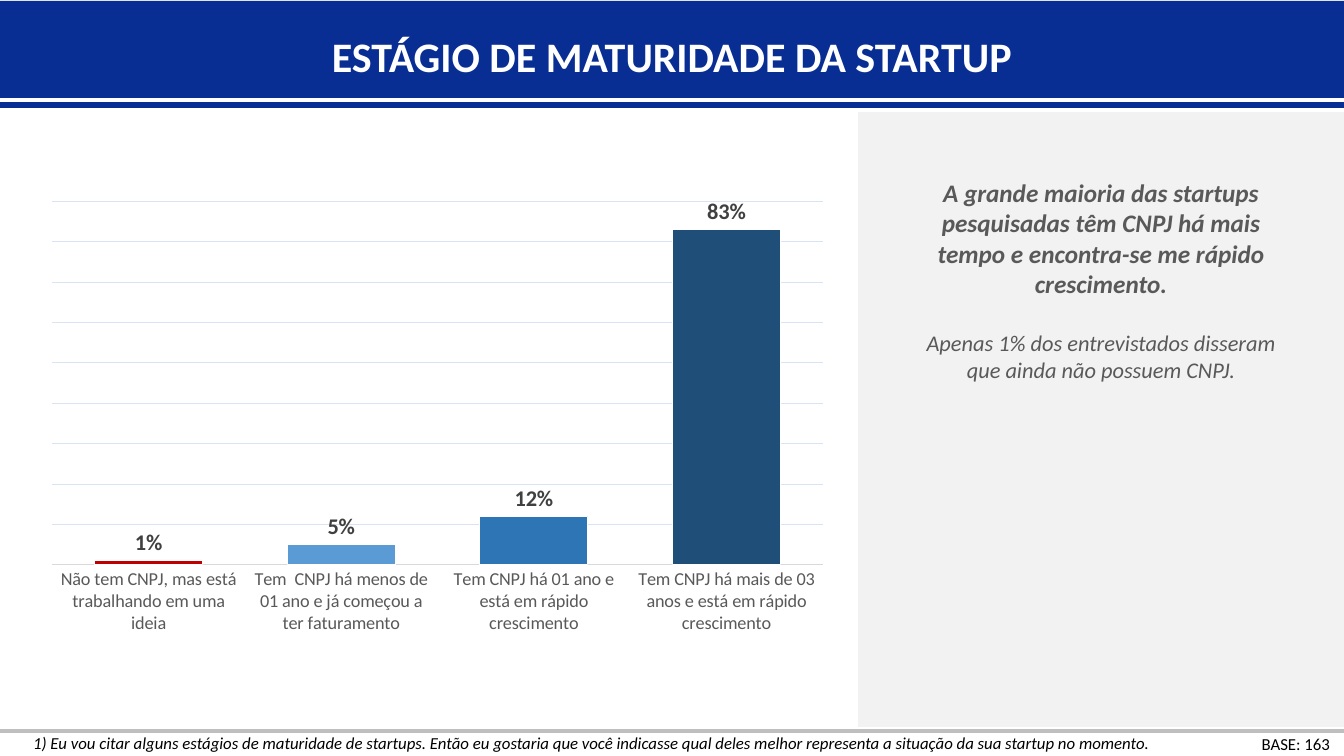
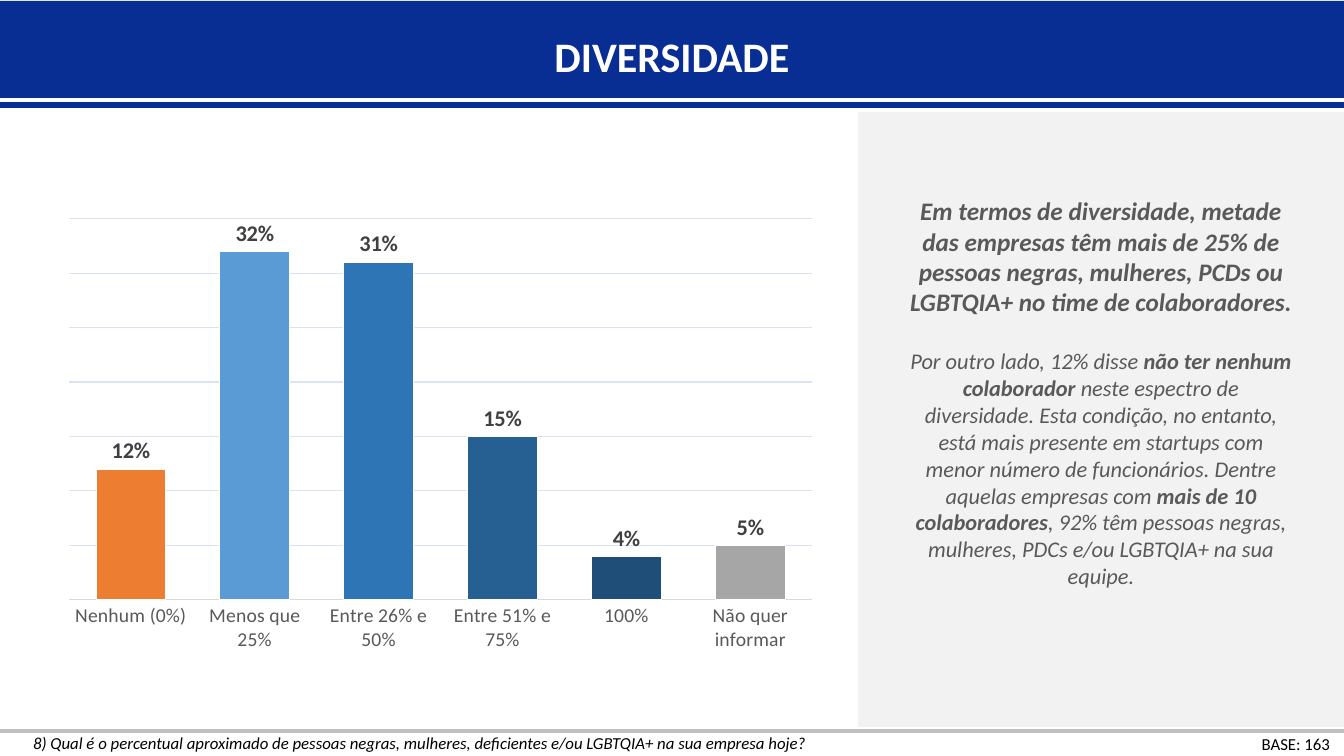
from dataclasses import dataclass

from lxml import etree
from pptx import Presentation
from pptx import util as u
from pptx.chart import data as chart_data
from pptx.dml.color import RGBColor
from pptx.enum import chart as chart_enum
from pptx.enum import shapes, text
from pptx.oxml import ns

# Shared style
FONT = "Calibri"
NAVY, WHITE, PANEL, RULE = "082D93", "FFFFFF", "F2F2F2", "BFBFBF"
BLACK, BODY, LABEL = "000000", "595959", "404040"
AXIS, GRID, SERIES = "D9D9D9", "DAE3F3", "A9D18E"
SKY, BLUE, STEEL, DEEP = "5B9BD5", "2E75B6", "265F92", "1F4E79"
RED, ORANGE, GREY = "C00000", "ED7D31", "A6A6A6"

SLIDE_WIDTH, SLIDE_HEIGHT = 13.33, 7.5
BAND_TOP, BAND_BOTTOM = 0.01, 1.09
PANEL_LEFT, PANEL_BOTTOM = 8.51, 7.21
BASE_TEXT = "BASE: 163"


@dataclass(frozen=True)
class Box:
    left: float
    top: float
    width: float
    height: float

    def lengths(self) -> tuple[u.Length, ...]:
        return tuple(u.Inches(value) for value in
                     (self.left, self.top, self.width, self.height))


@dataclass(frozen=True)
class Rule:
    y: float
    color: str


@dataclass(frozen=True)
class Run:
    text: str
    bold: bool = False


@dataclass(frozen=True)
class Bar:
    category: str
    value: float
    color: str


@dataclass(frozen=True)
class ColumnChart:
    box: Box
    bars: tuple[Bar, ...]
    category_size: int
    maximum: float
    step: float


@dataclass(frozen=True)
class SurveySlide:
    title: str
    question: str
    headline: str
    details: tuple[Run, ...]
    panel_side_inset: float
    panel_top_inset: float
    chart: ColumnChart


RULES = (Rule(BAND_BOTTOM, WHITE), Rule(0.99, WHITE), Rule(7.25, RULE))

SURVEY_SLIDES = (
    SurveySlide(
        title="ESTÁGIO DE MATURIDADE DA STARTUP",
        question="1) Eu vou citar alguns estágios de maturidade de startups. "
                 "Então eu gostaria que você indicasse qual deles melhor "
                 "representa a situação da sua startup no momento.",
        headline="A grande maioria das startups pesquisadas têm CNPJ há mais "
                 "tempo e encontra-se me rápido crescimento.",
        details=(Run("Apenas 1% dos entrevistados disseram que ainda não "
                     "possuem CNPJ."),),
        panel_side_inset=0.66,
        panel_top_inset=0.67,
        chart=ColumnChart(
            Box(0.36, 1.91, 7.96, 4.48),
            (Bar("Não tem CNPJ, mas está trabalhando em uma ideia", 0.01, RED),
             Bar("Tem  CNPJ há menos de 01 ano e já começou a ter faturamento",
                 0.05, SKY),
             Bar("Tem CNPJ há 01 ano e está em rápido crescimento", 0.12, BLUE),
             Bar("Tem CNPJ há mais de 03 anos e está em rápido crescimento",
                 0.83, DEEP)),
            category_size=13, maximum=0.9, step=0.1),
    ),
    SurveySlide(
        title="DIVERSIDADE",
        question="8) Qual é o percentual aproximado de pessoas negras, "
                 "mulheres, deficientes e/ou LGBTQIA+ na sua empresa hoje?",
        headline="Em termos de diversidade, metade das empresas têm mais de "
                 "25% de pessoas negras, mulheres, PCDs ou LGBTQIA+ no time "
                 "de colaboradores.",
        details=(
            Run("Por outro lado, 12% disse "),
            Run("não ter nenhum colaborador ", bold=True),
            Run("neste espectro de diversidade. Esta condição, no entanto, "
                "está mais presente em startups com menor número de "
                "funcionários. Dentre aquelas empresas com "),
            Run("mais de 10 colaboradores", bold=True),
            Run(", 92% têm pessoas negras, mulheres, PDCs e/ou LGBTQIA+ na "
                "sua equipe."),
        ),
        panel_side_inset=0.49,
        panel_top_inset=0.85,
        chart=ColumnChart(
            Box(0.53, 2.08, 7.68, 4.48),
            (Bar("Nenhum (0%)", 0.12, ORANGE),
             Bar("Menos que 25%", 0.32, SKY),
             Bar("Entre 26% e 50%", 0.31, BLUE),
             Bar("Entre 51% e 75%", 0.15, STEEL),
             Bar("100%", 0.04, DEEP),
             Bar("Não quer informar", 0.05, GREY)),
            category_size=14, maximum=0.35, step=0.05),
    ),
)


def rgb(color: str) -> RGBColor:
    return RGBColor.from_string(color)


def fill_with(target, color: str) -> None:
    target.fill.solid()
    target.fill.fore_color.rgb = rgb(color)


def style_line(line, color: str, width: float) -> None:
    line.color.rgb = rgb(color)
    line.width = u.Pt(width)


def style_font(font, size: float, color: str, bold: bool = False,
               italic: bool = False) -> None:
    font.name = FONT
    font.size = u.Pt(size)
    font.color.rgb = rgb(color)
    font.bold = bold
    font.italic = italic


def add_run(paragraph, content: str, size: float, color: str,
            bold: bool = False, italic: bool = False) -> None:
    run = paragraph.add_run()
    run.text = content
    style_font(run.font, size, color, bold, italic)


def place(shape, box: Box) -> None:
    shape.left, shape.top, shape.width, shape.height = box.lengths()


def draw_title(slide, title: str) -> None:
    """Turn the title placeholder into the full-width band."""
    shape = slide.shapes.title
    place(shape, Box(0, BAND_TOP, SLIDE_WIDTH, BAND_BOTTOM - BAND_TOP))
    fill_with(shape, NAVY)
    frame = shape.text_frame
    frame.auto_size = text.MSO_AUTO_SIZE.NONE
    frame.vertical_anchor = text.MSO_ANCHOR.MIDDLE
    paragraph = frame.paragraphs[0]
    paragraph.alignment = text.PP_ALIGN.CENTER
    add_run(paragraph, title, 30, WHITE, bold=True)


def format_panel_paragraph(paragraph, space_before: float) -> None:
    paragraph.alignment = text.PP_ALIGN.CENTER
    paragraph.line_spacing = 1.0
    paragraph.space_before = u.Pt(space_before)
    properties = paragraph._p.get_or_add_pPr()
    properties.set("marL", "0")
    properties.set("indent", "0")
    etree.SubElement(properties, ns.qn("a:buNone"))


def draw_panel(slide, survey: SurveySlide) -> None:
    """Turn the body placeholder into the grey commentary panel."""
    shape = slide.placeholders[1]
    place(shape, Box(PANEL_LEFT, BAND_BOTTOM, SLIDE_WIDTH - PANEL_LEFT,
                     PANEL_BOTTOM - BAND_BOTTOM))
    fill_with(shape, PANEL)
    frame = shape.text_frame
    frame.auto_size = text.MSO_AUTO_SIZE.NONE
    frame.vertical_anchor = text.MSO_ANCHOR.TOP
    frame.margin_left = frame.margin_right = u.Inches(survey.panel_side_inset)
    frame.margin_top = u.Inches(survey.panel_top_inset)

    headline = frame.paragraphs[0]
    format_panel_paragraph(headline, 0)
    add_run(headline, survey.headline, 18, BODY, bold=True, italic=True)

    details = frame.add_paragraph()
    format_panel_paragraph(details, 22)
    for run in survey.details:
        add_run(details, run.text, 16, BODY, run.bold, italic=True)


def draw_rule(slide, rule: Rule) -> None:
    y = u.Inches(rule.y)
    connector = slide.shapes.add_connector(
        shapes.MSO_CONNECTOR.STRAIGHT, 0, y, u.Inches(SLIDE_WIDTH), y)
    style_line(connector.line, rule.color, 3)
    etree.SubElement(connector.element.spPr, ns.qn("a:effectLst"))


def draw_note(slide, content: str, box: Box, alignment: text.PP_ALIGN,
              italic: bool = False) -> None:
    frame = slide.shapes.add_textbox(*box.lengths()).text_frame
    frame.word_wrap = True
    paragraph = frame.paragraphs[0]
    paragraph.alignment = alignment
    add_run(paragraph, content, 12, BLACK, italic=italic)


def draw_chart(slide, column_chart: ColumnChart) -> None:
    bars = column_chart.bars
    data = chart_data.CategoryChartData(number_format="0%")
    data.categories = [bar.category for bar in bars]
    data.add_series("Series 1", [bar.value for bar in bars])
    chart = slide.shapes.add_chart(
        chart_enum.XL_CHART_TYPE.COLUMN_CLUSTERED,
        *column_chart.box.lengths(), data).chart
    chart.has_title = False
    chart.has_legend = False
    style_font(chart.font, 10, BLACK)

    # Axes
    category_axis = chart.category_axis
    category_axis.major_tick_mark = chart_enum.XL_TICK_MARK.NONE
    style_font(category_axis.tick_labels.font, column_chart.category_size, BODY)
    style_line(category_axis.format.line, AXIS, 0.75)
    value_axis = chart.value_axis
    value_axis.visible = False
    value_axis.minimum_scale = 0
    value_axis.maximum_scale = column_chart.maximum
    value_axis.major_unit = column_chart.step
    value_axis.has_major_gridlines = True
    style_line(value_axis.major_gridlines.format.line, GRID, 0.75)

    # Columns
    plot = chart.plots[0]
    plot.gap_width = 78
    plot.vary_by_categories = False
    series = plot.series[0]
    fill_with(series.format, SERIES)
    style_line(series.format.line, WHITE, 0.75)
    for index, bar in enumerate(bars):
        point = series.points[index]
        fill_with(point.format, bar.color)
        style_line(point.format.line, WHITE, 0.75)

    # Value labels
    labels = series.data_labels
    labels.show_value = True
    labels.number_format = "0%"
    labels.number_format_is_linked = False
    labels.position = chart_enum.XL_LABEL_POSITION.OUTSIDE_END
    style_font(labels.font, 16, LABEL, bold=True)


def draw_slide(presentation, survey: SurveySlide) -> None:
    slide = presentation.slides.add_slide(presentation.slide_layouts[1])
    draw_title(slide, survey.title)
    draw_panel(slide, survey)
    for rule in RULES:
        draw_rule(slide, rule)
    draw_note(slide, survey.question, Box(0.23, 7.22, 13.1, 0.3),
              text.PP_ALIGN.LEFT, italic=True)
    draw_note(slide, BASE_TEXT, Box(11.51, 7.23, 1.78, 0.3),
              text.PP_ALIGN.RIGHT)
    draw_chart(slide, survey.chart)


def main() -> None:
    presentation = Presentation()
    presentation.slide_width = u.Inches(SLIDE_WIDTH)
    presentation.slide_height = u.Inches(SLIDE_HEIGHT)
    for survey in SURVEY_SLIDES:
        draw_slide(presentation, survey)
    presentation.save("out.pptx")


if __name__ == "__main__":
    main()
